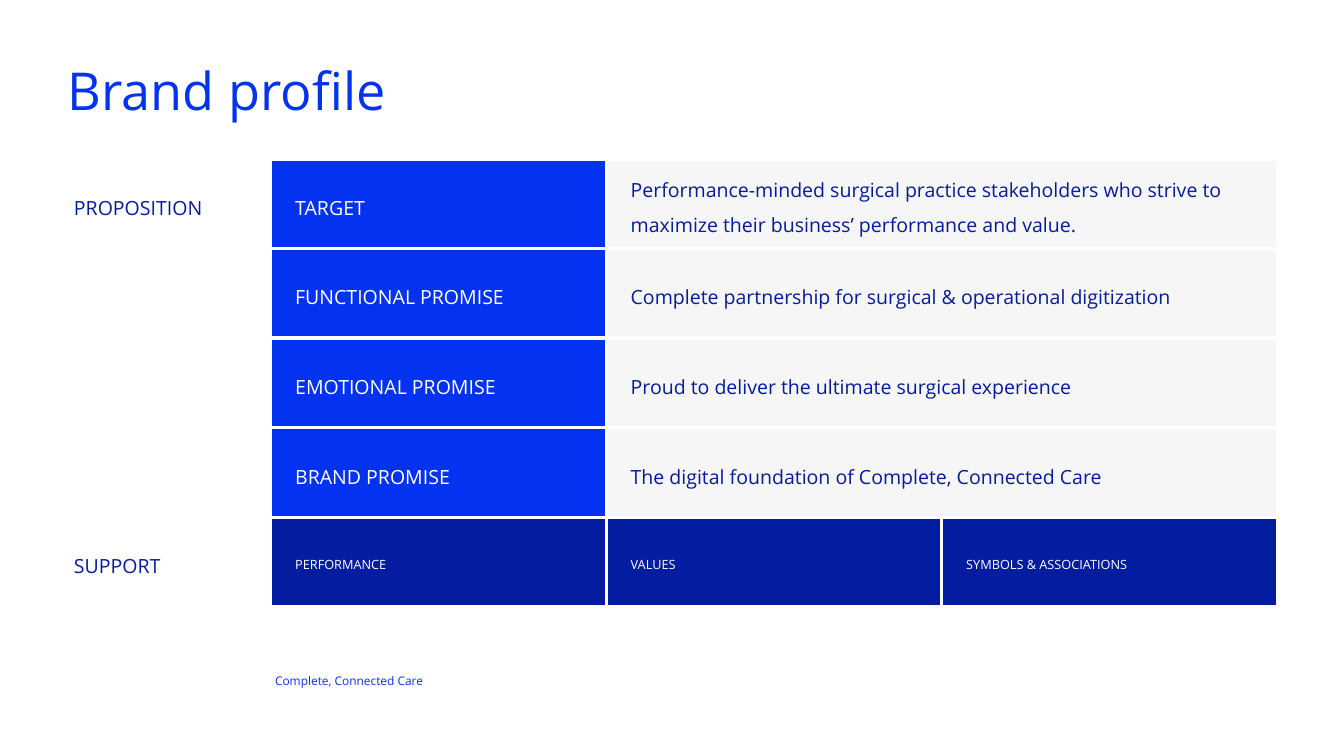
import dataclasses
import typing

import lxml.etree
import pptx
import pptx.dml.color
import pptx.enum.text
import pptx.oxml.ns
import pptx.util

RGBColor = pptx.dml.color.RGBColor
ANCHOR = pptx.enum.text.MSO_ANCHOR
PX = 9144  # one px is a hundredth of an inch

BRIGHT = RGBColor(0x03, 0x32, 0xF1)
TAGLINE_BLUE = RGBColor(0x04, 0x31, 0xEF)
NAVY = RGBColor(0x04, 0x1C, 0x9F)
PALE = RGBColor(0xF6, 0xF6, 0xF6)
WHITE = RGBColor(0xFF, 0xFF, 0xFF)

FONT = "Open Sans"
COLUMN_WIDTHS = (362, 549, 549, 549)
TABLE_HEIGHT = 733


@dataclasses.dataclass(frozen=True)
class CellStyle:
    size: int
    color: RGBColor
    fill: typing.Optional[RGBColor] = None


LABEL = CellStyle(23, NAVY)
HEADING = CellStyle(23, WHITE, BRIGHT)
STATEMENT = CellStyle(23, NAVY, PALE)
PILLAR = CellStyle(15, WHITE, NAVY)


@dataclasses.dataclass(frozen=True)
class ProfileRow:
    texts: tuple[str, ...]
    styles: tuple[CellStyle, ...] = (LABEL, HEADING, STATEMENT)


ROWS = (
    ProfileRow(("PROPOSITION", "TARGET",
                "Performance-minded surgical practice stakeholders who strive to "
                "maximize their business’ performance and value.")),
    ProfileRow(("", "FUNCTIONAL PROMISE",
                "Complete partnership for surgical & operational digitization")),
    ProfileRow(("", "EMOTIONAL PROMISE",
                "Proud to deliver the ultimate surgical experience")),
    ProfileRow(("", "BRAND PROMISE",
                "The digital foundation of Complete, Connected Care")),
    ProfileRow(("SUPPORT", "PERFORMANCE", "VALUES", "SYMBOLS & ASSOCIATIONS"),
               (LABEL, PILLAR, PILLAR, PILLAR)),
)


def px(length: int) -> pptx.util.Emu:
    return pptx.util.Emu(length * PX)


def apply(target: typing.Any, values: dict[str, typing.Any]) -> None:
    for name, value in values.items():
        setattr(target, name, value)


def format_font(font: typing.Any, size: float, color: RGBColor) -> None:
    apply(font, {"name": FONT, "size": pptx.util.Pt(size), "bold": False})
    font.color.rgb = color


def fill_text(box: typing.Any, text: str, size: float, color: RGBColor,
              top: int, anchor: ANCHOR) -> None:
    frame = box.text_frame
    apply(frame, {"text": text, "word_wrap": True, "vertical_anchor": anchor,
                  "auto_size": pptx.enum.text.MSO_AUTO_SIZE.NONE,
                  "margin_left": 0, "margin_top": px(top),
                  "margin_right": 0, "margin_bottom": 0})
    para = frame.paragraphs[0]
    para.alignment = pptx.enum.text.PP_ALIGN.LEFT
    format_font(para.font, size, color)


def add_borders(cell: typing.Any) -> None:
    properties = cell._tc.get_or_add_tcPr()
    qn = pptx.oxml.ns.qn
    for index, side in enumerate(("lnL", "lnR", "lnT", "lnB")):
        line = lxml.etree.Element(qn(f"a:{side}"), w=str(pptx.util.Pt(4.5)))
        fill = lxml.etree.SubElement(line, qn("a:solidFill"))
        lxml.etree.SubElement(fill, qn("a:srgbClr"), val=str(WHITE))
        properties.insert(index, line)


def fill_cell(cell: typing.Any, text: str, style: CellStyle) -> None:
    cell.text = text
    apply(cell, {"vertical_anchor": ANCHOR.MIDDLE,
                 "margin_left": px(40), "margin_top": 0,
                 "margin_right": px(40), "margin_bottom": 0})
    para = cell.text_frame.paragraphs[0]
    apply(para, {"line_spacing": 1.3, "space_after": pptx.util.Pt(12)})
    format_font(para.font, style.size, style.color)
    if style.fill is None:
        cell.fill.background()
    else:
        cell.fill.solid()
        cell.fill.fore_color.rgb = style.fill


def add_profile_table(page: typing.Any) -> None:
    table = page.shapes.add_table(
        len(ROWS), len(COLUMN_WIDTHS), px(81), px(260),
        px(sum(COLUMN_WIDTHS)), px(TABLE_HEIGHT)).table
    apply(table, {"first_row": False, "horz_banding": False})
    for column, width in zip(table.columns, COLUMN_WIDTHS):
        column.width = px(width)
    for index, row in enumerate(ROWS):
        table.rows[index].height = px(TABLE_HEIGHT) // len(ROWS)
        for position, (text, style) in enumerate(zip(row.texts, row.styles)):
            fill_cell(table.cell(index, position), text, style)
        # A statement spans the last two columns
        if len(row.texts) < len(COLUMN_WIDTHS):
            table.cell(index, 2).merge(table.cell(index, 3))
    for cell in table.iter_cells():
        add_borders(cell)


def main() -> None:
    deck = pptx.Presentation()
    apply(deck, {"slide_width": px(2199), "slide_height": px(1237)})
    page = deck.slides.add_slide(deck.slide_layouts[5])

    # Title
    title = page.shapes.title
    apply(title, {"left": px(111), "top": px(92),
                  "width": px(1913), "height": px(106)})
    fill_text(title, "Brand profile", 61.5, BRIGHT, 2, ANCHOR.MIDDLE)

    # Proposition and support table
    add_profile_table(page)

    # Tagline
    tagline = page.shapes.add_textbox(px(450), px(1100), px(348), px(24))
    fill_text(tagline, "Complete, Connected Care", 14, TAGLINE_BLUE, 3, ANCHOR.TOP)

    deck.save("out.pptx")


if __name__ == "__main__":
    main()
